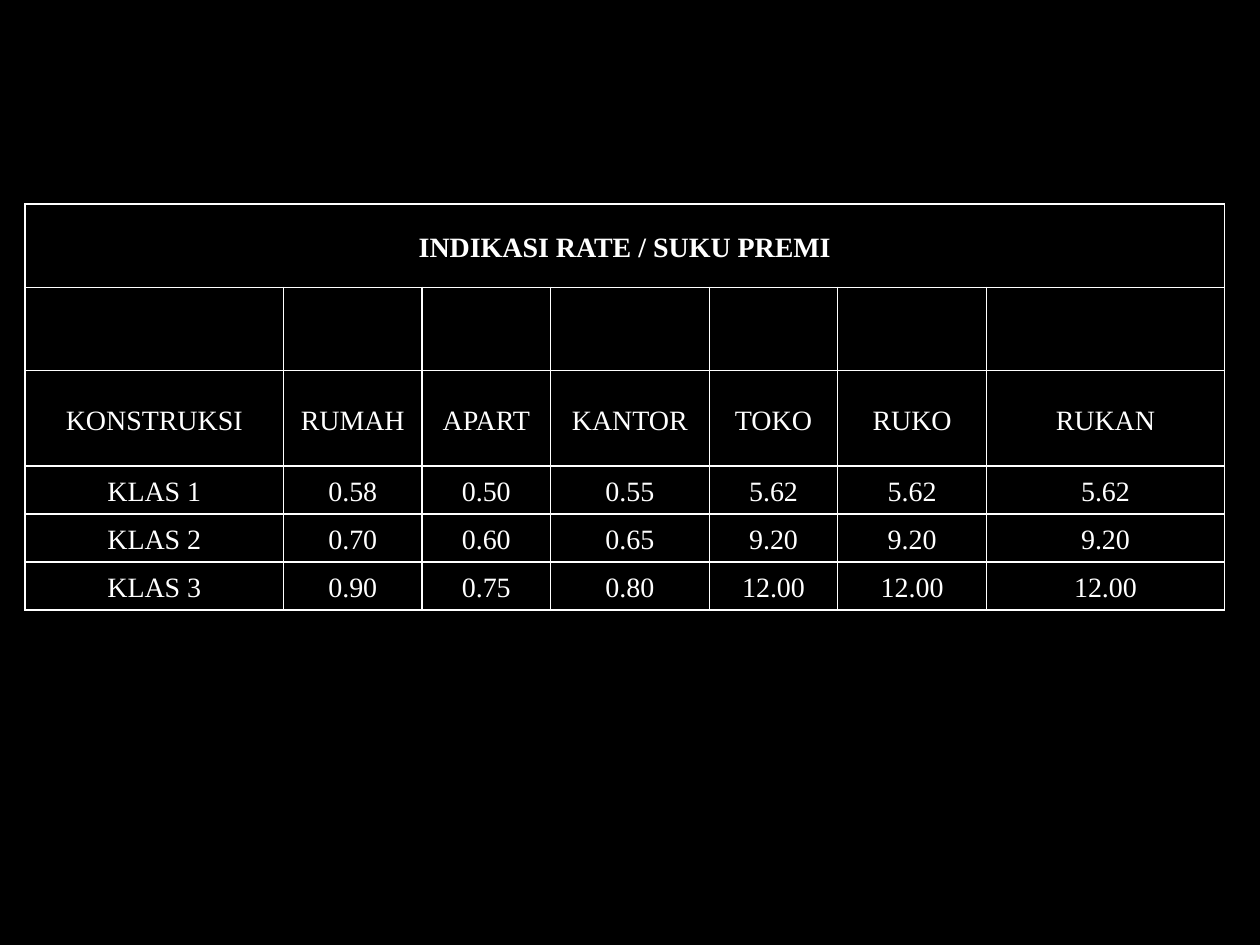
from dataclasses import dataclass

from lxml import etree
from pptx import Presentation, util as u
from pptx.dml.color import RGBColor
from pptx.enum import text
from pptx.oxml.ns import qn

HEADING = "INDIKASI RATE / SUKU PREMI"
BUILDINGS = ["KONSTRUKSI", "RUMAH", "APART", "KANTOR", "TOKO", "RUKO", "RUKAN"]
RATES = [
    ["KLAS 1", "0.58", "0.50", "0.55", "5.62", "5.62", "5.62"],
    ["KLAS 2", "0.70", "0.60", "0.65", "9.20", "9.20", "9.20"],
    ["KLAS 3", "0.90", "0.75", "0.80", "12.00", "12.00", "12.00"],
]
COLUMN_WIDTHS = [2.05, 1.1, 1.02, 1.26, 1.02, 1.18, 1.89]
ROW_HEIGHTS = [0.66, 0.66, 0.76] + [0.38] * len(RATES)
LEFT, TOP = 0.2, 1.62


@dataclass(frozen=True)
class Theme:
    background: str = "000000"
    ink: str = "FFFFFF"
    font: str = "Times New Roman"
    size: int = 16
    line_spacing: float = 1.15
    border: int = 1


THEME = Theme()


def add_borders(cell):
    """Rule all four sides; borders must precede the fill in the cell's XML."""
    props = cell._tc.get_or_add_tcPr()
    for position, side in enumerate(("lnL", "lnR", "lnT", "lnB")):
        line = etree.Element(qn(f"a:{side}"), w=str(u.Pt(THEME.border)))
        fill = etree.SubElement(line, qn("a:solidFill"))
        etree.SubElement(fill, qn("a:srgbClr"), val=THEME.ink)
        props.insert(position, line)


def write(cell, words, bold):
    paragraph = cell.text_frame.paragraphs[0]
    paragraph.alignment = text.PP_ALIGN.CENTER
    paragraph.line_spacing = THEME.line_spacing
    run = paragraph.add_run()
    run.text = words
    run.font.name = THEME.font
    run.font.size = u.Pt(THEME.size)
    run.font.bold = bold
    run.font.color.rgb = RGBColor.from_string(THEME.ink)


def add_rate_table(slide):
    blank = [""] * len(BUILDINGS)
    rows = [[HEADING] + blank[1:], blank, BUILDINGS, *RATES]
    table = slide.shapes.add_table(
        len(rows), len(BUILDINGS), u.Inches(LEFT), u.Inches(TOP),
        u.Inches(sum(COLUMN_WIDTHS)), u.Inches(sum(ROW_HEIGHTS))).table
    table.first_row = table.horz_banding = False
    for column, width in zip(table.columns, COLUMN_WIDTHS):
        column.width = u.Inches(width)
    for row, height in zip(table.rows, ROW_HEIGHTS):
        row.height = u.Inches(height)

    for r, row in enumerate(rows):
        for c, words in enumerate(row):
            cell = table.cell(r, c)
            cell.fill.background()
            cell.vertical_anchor = text.MSO_ANCHOR.MIDDLE
            cell.margin_left = cell.margin_right = 0
            cell.margin_top = cell.margin_bottom = 0
            add_borders(cell)
            if words:
                write(cell, words, bold=r == 0)
    table.cell(0, 0).merge(table.cell(0, len(BUILDINGS) - 1))


def main():
    deck = Presentation()
    deck.slide_width, deck.slide_height = u.Inches(10), u.Inches(7.5)
    slide = deck.slides.add_slide(deck.slide_layouts.get_by_name("Blank"))
    slide.background.fill.solid()
    slide.background.fill.fore_color.rgb = RGBColor.from_string(THEME.background)
    add_rate_table(slide)
    deck.save("out.pptx")


if __name__ == "__main__":
    main()
